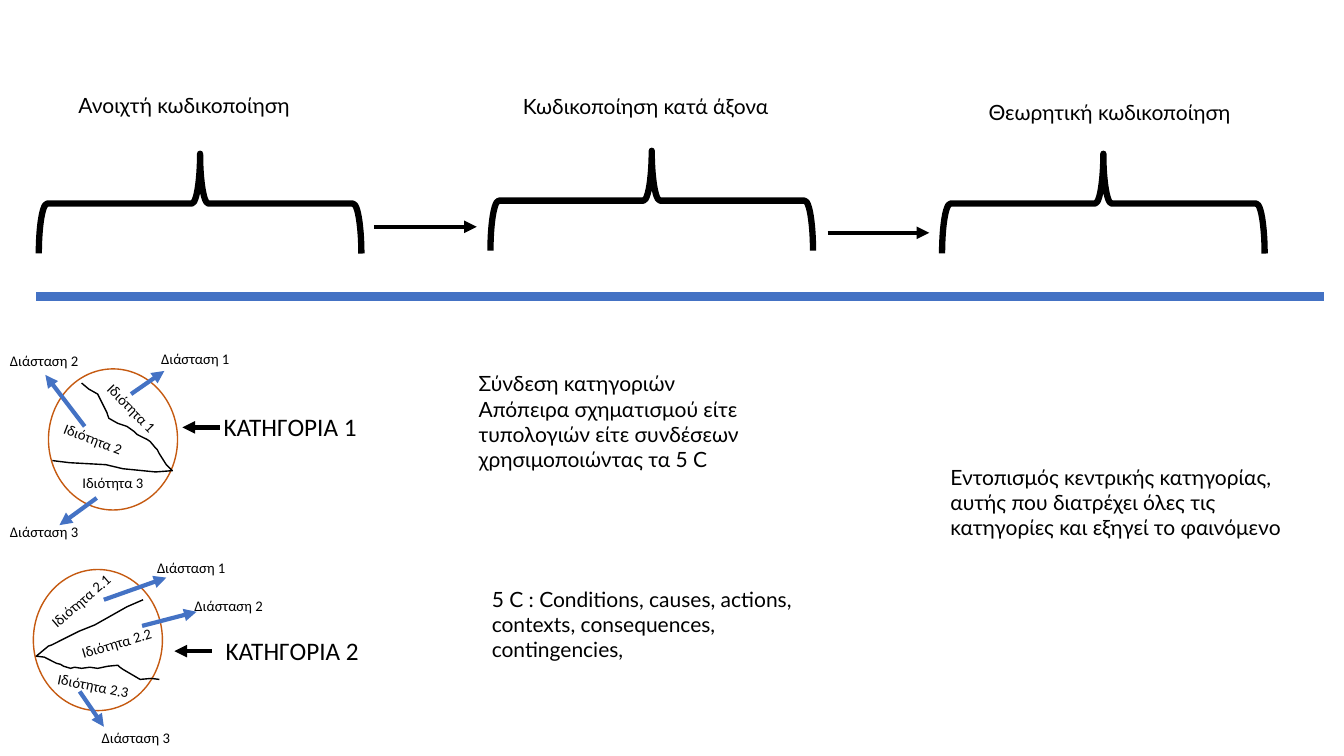
from lxml.etree import SubElement
from pptx import Presentation
from pptx.dml.color import RGBColor
from pptx.enum.shapes import MSO_CONNECTOR as Connector, MSO_SHAPE as Shape
from pptx.enum.text import MSO_AUTO_SIZE as AutoSize
from pptx.oxml.ns import qn
from pptx.util import Pt

COLORS = {"ink": "000000", "blue": "4472C4", "circle": "C55A11"}
STYLES = {
    "small": {"size": Pt(10.5), "name": "Calibri"},
    "category": {"size": Pt(18), "name": "Calibri"},
    "stage": {"size": Pt(15), "name": "Lato"},
}
HEIGHTS = {"small": 20.2, "category": 28.8, "stage": 25.2}

STAGES = [
    ("Ανοιχτή κωδικοποίηση", 49, 62.6, 204.5),
    ("Κωδικοποίηση κατά άξονα", 366.5, 63.4, 230.4),
    ("Θεωρητική κωδικοποίηση", 699.1, 67.7, 234),
]
BRACE_TOPS = [30.2, 28.1, 30.2]
BRACE_LEFT, BRACE_STEP, BRACE_WIDTH, BRACE_LENGTH = 107.3, 322.6, 71.3, 230.4
STAGE_ARROWS = [(267.1, 162, 340.6, 162), (591.1, 166.3, 663.8, 166.3)]
TIMELINE = (25.9, 211.7, 945.4, 211.7)

EXPLANATIONS = [
    (["Σύνδεση κατηγοριών",
      "Απόπειρα σχηματισμού είτε τυπολογιών είτε συνδέσεων χρησιμοποιώντας τα 5 C"],
     334.8, 261.4, 261.4, 79.9),
    (["5 C : Conditions, causes, actions, contexts, consequences, contingencies,"],
     344.2, 415.4, 271.4, 61.9),
    (["Εντοπισμός κεντρικής κατηγορίας, αυτής που διατρέχει όλες τις "
      "κατηγορίες και εξηγεί το φαινόμενο"],
     671.8, 328.3, 261.4, 79.9),
]

CIRCLE_SIZE = (92.2, 100.8)
DIMENSION_WIDTH, CATEGORY_WIDTH = 64.8, 120.2
CATEGORIES = [
    {
        "name": ("ΚΑΤΗΓΟΡΙΑ 1", 152.6, 290.2),
        "pointer": (157, 305.3, 130.3, 305.3),
        "circle": (34.6, 263.5),
        "divider": [
            (58.3, 273.6), (63.4, 277.9), (69.8, 281.5), (76.3, 294.5), (77, 296.6),
            (77.8, 298.8), (84.2, 302.4), (90.7, 304.6), (95.8, 308.2), (97.9, 310.3),
            (100.8, 311.8), (105.1, 313.9), (107.3, 315.4), (110.9, 319.7),
            (112.3, 321.1), (113.8, 324), (118.8, 331.9), (123.1, 336.2), (112.3, 337),
            (110.2, 337), (87.8, 334.8), (75.6, 331.9), (49.7, 330.5), (37.4, 329),
        ],
        "properties": [
            ("Ιδιότητα 1", 64.8, 282.2, 59.8, 45.4),
            ("Ιδιότητα 2", 37.4, 304.6, 63.4, 21.1),
            ("Ιδιότητα 3", 51.8, 334.8, 73.4, 0),
        ],
        "dimensions": [
            ("Διάσταση 1", 108, 246.2, (93.6, 281.5, 117.4, 265)),
            ("Διάσταση 2", 0, 247.7, (60.5, 304.6, 32.4, 267.8)),
            ("Διάσταση 3", 0, 370.1, (69.1, 355.7, 42.5, 375.1)),
        ],
    },
    {
        "name": ("ΚΑΤΗΓΟΡΙΑ 2", 154.1, 450),
        "pointer": (151.2, 465.1, 124.6, 465.1),
        "circle": (23.8, 406.8),
        "divider": [
            (113.8, 485.3), (108, 484.6), (100.1, 485.3), (87.8, 478.1), (85.7, 476.6),
            (84.2, 475.2), (77, 475.9), (69.8, 477.4), (64.1, 476.6), (58.3, 477.4),
            (53.3, 476.6), (50.4, 477.4), (45.4, 475.9), (43.2, 474.5), (40.3, 473.8),
            (31.7, 469.4), (25.9, 468.7), (34.6, 461.5), (36.7, 460.8), (56.9, 450.7),
            (67.7, 446.4), (90.7, 433.4), (102.2, 428.4),
        ],
        "properties": [
            ("Ιδιότητα 2.1", 23.8, 416.2, 74.9, 319.3),
            ("Ιδιότητα 2.2", 50.4, 449.3, 67, 343.4),
            ("Ιδιότητα 2.3", 33.8, 480.2, 69.1, 11.5),
        ],
        "dimensions": [
            ("Διάσταση 1", 105.1, 395.3, (74.2, 428.4, 118.8, 412.6)),
            ("Διάσταση 2", 131.8, 422.6, (101.5, 447.1, 140.4, 437)),
            ("Διάσταση 3", 65.5, 517, (56.9, 493.9, 74.2, 519.1)),
        ],
    },
]

deck = Presentation()
deck.slide_width, deck.slide_height = Pt(960), Pt(540)
slide = deck.slides.add_slide(deck.slide_layouts[6])
shapes = slide.shapes


def paint_line(part, color, weight):
    part.line.color.rgb = RGBColor.from_string(COLORS[color])
    part.line.width = Pt(weight)


def outline(part, color, weight):
    part.shadow.inherit = False
    part.fill.background()
    paint_line(part, color, weight)


def add_line(ends, color, weight, arrow=True):
    line = shapes.add_connector(Connector.STRAIGHT, *map(Pt, ends))
    paint_line(line, color, weight)
    if arrow:
        SubElement(line.line._get_or_add_ln(), qn("a:tailEnd"), type="triangle")
    SubElement(line._element.spPr, qn("a:effectLst"))


def add_text(lines, left, top, width, style, height=None, rotation=0):
    box = shapes.add_textbox(*map(Pt, (left, top, width, height or HEIGHTS[style])))
    box.rotation = rotation
    frame = box.text_frame
    frame.word_wrap = True
    frame.auto_size = AutoSize.SHAPE_TO_FIT_TEXT
    frame.text = "\n".join(lines)
    for paragraph in frame.paragraphs:
        for attribute, value in STYLES[style].items():
            setattr(paragraph.font, attribute, value)
        paragraph.font.color.rgb = RGBColor.from_string(COLORS["ink"])


def add_divider(points):
    start, *rest = [(Pt(x), Pt(y)) for x, y in points]
    builder = shapes.build_freeform(*start)
    builder.add_line_segments(rest, close=False)
    outline(builder.convert_to_shape(), "ink", 1)


add_line(TIMELINE, "blue", 6, arrow=False)

for category in CATEGORIES:
    circle = shapes.add_shape(Shape.OVAL, *map(Pt, category["circle"] + CIRCLE_SIZE))
    outline(circle, "circle", 1)
    add_divider(category["divider"])
    for name, left, top, width, rotation in category["properties"]:
        add_text([name], left, top, width, "small", rotation=rotation)
    name, left, top = category["name"]
    add_text([name], left, top, CATEGORY_WIDTH, "category")
    add_line(category["pointer"], "ink", 3)
    for name, left, top, arrow in category["dimensions"]:
        add_text([name], left, top, DIMENSION_WIDTH, "small")
        add_line(arrow, "blue", 3)

for index, ((stage, left, top, width), brace_top) in enumerate(zip(STAGES, BRACE_TOPS)):
    brace_left = BRACE_LEFT + index * BRACE_STEP
    brace = shapes.add_shape(
        Shape.RIGHT_BRACE, *map(Pt, (brace_left, brace_top, BRACE_WIDTH, BRACE_LENGTH)))
    brace.rotation = 270
    outline(brace, "ink", 4.5)
    add_text([stage], left, top, width, "stage")

for arrow in STAGE_ARROWS:
    add_line(arrow, "ink", 3)
for lines, left, top, width, height in EXPLANATIONS:
    add_text(lines, left, top, width, "stage", height)

deck.save("out.pptx")
